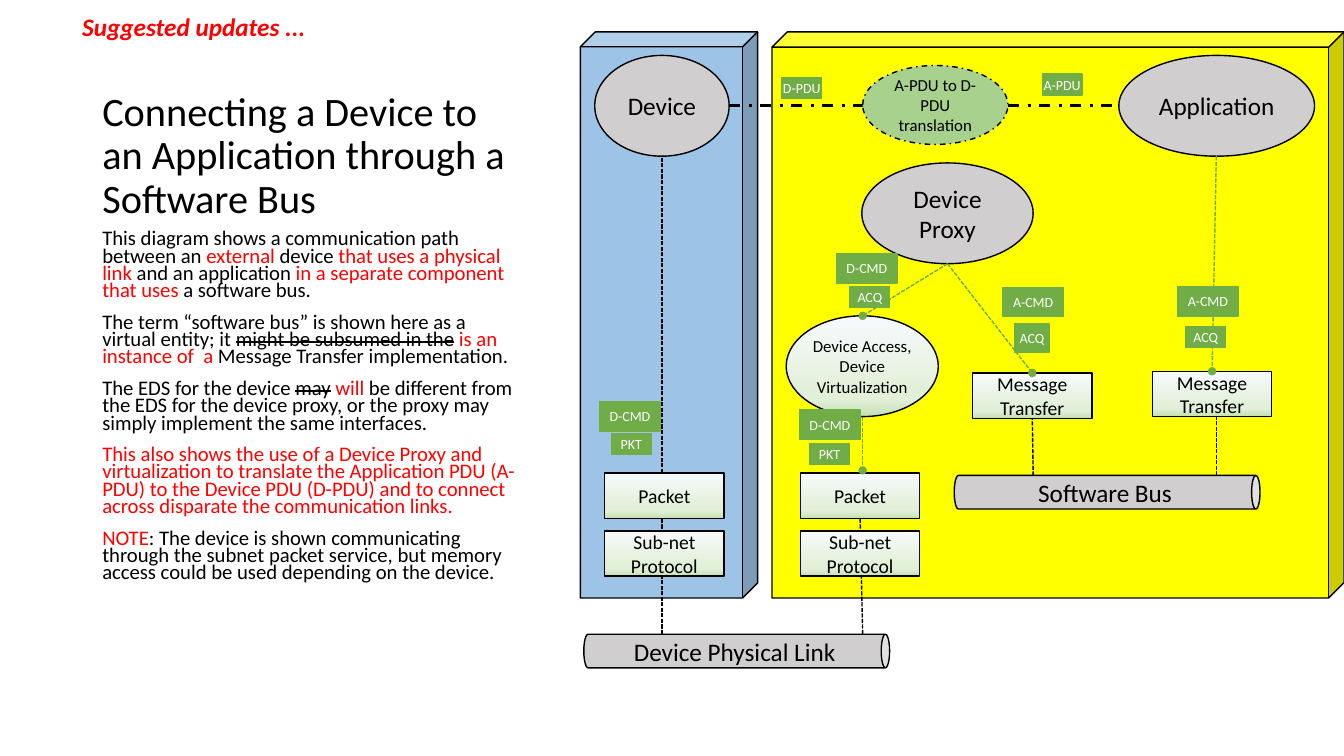
from pptx import Presentation
from pptx.util import Pt
from pptx.dml.color import RGBColor
from pptx.enum.dml import MSO_LINE as Dash
from pptx.enum.shapes import MSO_SHAPE as Form, MSO_CONNECTOR as Wire
from pptx.enum.text import MSO_ANCHOR as Anchor, PP_ALIGN as Align
from pptx.oxml.ns import qn
from lxml.etree import SubElement
from copy import deepcopy

deck = Presentation()
cell = 76200
deck.slide_width, deck.slide_height = 160 * cell, 90 * cell
slide = deck.slides.add_slide(deck.slide_layouts[6])
shapes = slide.shapes

hue = RGBColor.from_string
black, white, red = "000000", "FFFFFF", "FF0000"
gray, green, lime = "D0CECE", "70AD47", "A9D18E"
fade = [(0, "F7FAFD"), (0.74, "E2F0D9"), (0.83, "E2F0D9"), (1, "C5E0B4")]


def draw(form, place, fill, text="", size=18, ink=black, edge=black, inset=True):
    item = shapes.add_shape(form, *[round(n * cell) for n in place])
    item.shadow.inherit = False
    if fill == fade:
        item.fill.gradient()
        item.fill.gradient_angle = 270
        stops = item._element.spPr.find(qn("a:gradFill")).find(qn("a:gsLst"))
        for _ in fade[2:]:
            stops.append(deepcopy(stops[0]))
        for stop, (share, tone) in zip(item.fill.gradient_stops, fade):
            stop.color.rgb = hue(tone)
            stop.position = share
    else:
        item.fill.solid()
        item.fill.fore_color.rgb = hue(fill)
    item.line.color.rgb = hue(edge)
    item.line.width = Pt(1)
    frame = item.text_frame
    frame.text = text
    frame.word_wrap = size > 10
    frame.vertical_anchor = Anchor.MIDDLE
    if not inset:
        frame.margin_left = frame.margin_right = 0
    para = frame.paragraphs[0]
    para.alignment = Align.CENTER
    for run in para.runs:
        run.font.name, run.font.size = "Calibri", Pt(size)
        run.font.color.rgb = hue(ink)
    return item


def link(x1, y1, x2, y2, tone=black, width=1, dash=Dash.SQUARE_DOT):
    ends = [round(n * cell) for n in (x1, y1, x2, y2)]
    wire = shapes.add_connector(Wire.STRAIGHT, *ends)
    wire.line.color.rgb = hue(tone)
    wire.line.width = Pt(width)
    wire.line.dash_style = dash
    props = wire._element.spPr
    if tone == green:
        SubElement(props.find(qn("a:ln")), qn("a:tailEnd"), type="oval")
    if dash == Dash.SQUARE_DOT:
        props.find(qn("a:ln")).find(qn("a:prstDash")).set("val", "sysDash")
    SubElement(props, qn("a:effectLst"))
    return wire


for x, wide, fill, depth in [(91.9, 68.1, "FFFF00", 0.027), (69.1, 21.1, "9DC3E6", 0.084)]:
    cube = draw(Form.CUBE, (x, 3.8, wide, 67.4), fill)
    cube.adjustments[0] = depth

notes = [
    [("This diagram shows a communication path between an ", black), ("external ", red),
     ("device ", black), ("that uses a physical link", red), (" and an application ", black),
     ("in a separate component that uses ", red), ("a software bus.", black)],
    [("The term “software bus” is shown here as a virtual entity; it ", black),
     ("might be subsumed in the", "strike"), (" is an instance of  a ", red),
     ("Message Transfer implementation.", black)],
    [("The EDS for the device ", black), ("may", "strike"), (" ", black), ("will", red),
     (" be different from the EDS for the device proxy, or the proxy may simply "
      "implement the same interfaces.", black)],
    [("This also shows the use of a Device Proxy and virtualization to translate the "
      "Application PDU (A-PDU) to the Device PDU (D-PDU) and to connect across disparate "
      "the communication links.", red)],
    [("NOTE", red), (": The device is shown communicating through the subnet packet service, "
                     "but memory access could be used depending on the device.", black)],
]
title = [[("Connecting a Device to an Application through a Software Bus", black)]]
label = [[("Suggested updates ...", red)]]
texts = [
    ((11, 6, 51.6, 21), title, 28.8, 0.9, 0, Anchor.BOTTOM),
    ((11, 27, 51.6, 50), notes, 14.8, 0.7, 10, Anchor.TOP),
    ((8.6, 0.8, 54.5, 4.8), label, 18, 1, 0, Anchor.TOP),
]
for place, paras, size, lead, gap, anchor in texts:
    frame = shapes.add_textbox(*[round(n * cell) for n in place]).text_frame
    frame.word_wrap = True
    frame.vertical_anchor = anchor
    for i, parts in enumerate(paras):
        para = frame.add_paragraph() if i else frame.paragraphs[0]
        para.line_spacing, para.space_before = lead, Pt(gap)
        for words, tone in parts:
            run = para.add_run()
            run.text = words
            run.font.name, run.font.size = "Calibri", Pt(size)
            run.font.color.rgb = hue(red if tone == red else black)
            if tone == "strike":
                run._r.get_or_add_rPr().set("strike", "sngStrike")
            if paras == label:
                run.font.bold = run.font.italic = True

link(78.8, 75.5, 78.8, 18.6)
link(86.8, 12.6, 133.2, 12.6, width=2, dash=Dash.DASH_DOT)

for text, place in [
    ("Device Proxy", (102.6, 19.4, 20.4, 12)),
    ("Application", (133.2, 6.6, 23.3, 12)),
    ("Device", (70.8, 6.6, 16, 12)),
]:
    draw(Form.OVAL, place, gray, text)
draw(Form.OVAL, (93.6, 37.6, 18.1, 12), fade, "Device Access, Device Virtualization", 12, inset=False)
shift = draw(Form.OVAL, (102.7, 7.8, 17.3, 9.4), lime, "A-PDU to D-PDU translation", 12)
shift.line.dash_style = Dash.DASH_DOT

for text, x, y in [("Software Bus", 129.8, 40.4), ("Device Physical Link", 85.7, 59.3)]:
    pipe = draw(Form.CAN, (x, y, 4, 36.4), gray, text)
    pipe.rotation = 90
    pipe.text_frame._txBody.bodyPr.set("vert", "vert270")

proxy, app, device, near = [
    draw(Form.RECTANGLE, (x, y, 14.2, 5.4), fade, text, 14, inset=False)
    for text, x, y in [
        ("Message Transfer", 115.8, 44.4), ("Message Transfer", 137.2, 44.2),
        ("Packet", 72, 56.3), ("Packet", 95.3, 56.3),
    ]
]
link(102.7, 75.5, 102.4, 61.7).end_connect(near, 2)
link(123, 56.6, 122.9, 49.8).end_connect(proxy, 2)
link(144.8, 56.6, 144.8, 49.6)
for x in (72, 95.3):
    draw(Form.RECTANGLE, (x, 63.2, 14.2, 5.4), fade, "Sub-net Protocol", 14, inset=False)

link(112.8, 31.4, 102.7, 37.6, green)
link(112.8, 31.4, 122.9, 44.4, green).end_connect(proxy, 0)
link(144.8, 18.6, 144.3, 44.2, green).end_connect(app, 0)
link(102.7, 49.6, 102.7, 56, green)

small, large = (4.7, 2.5), (7.2, 3.5)
for text, spot, area in [
    ("D-PDU", (93.1, 9.2), small), ("A-PDU", (124.1, 8.8), small),
    ("PKT", (96.4, 52.8), small), ("PKT", (72.8, 51.6), small),
    ("ACQ", (101.2, 34.1), small), ("ACQ", (141.2, 38.9), small),
    ("ACQ", (120.8, 38.5), (4.1, 3.5)),
    ("A-CMD", (140.2, 34.1), large), ("A-CMD", (119.4, 34.2), large),
    ("D-CMD", (99.6, 30.2), large), ("D-CMD", (95.2, 48.8), large),
    ("D-CMD", (71.4, 47.8), large),
]:
    draw(Form.RECTANGLE, spot + area, green, text, 10, white, green, False)

deck.save("out.pptx")
